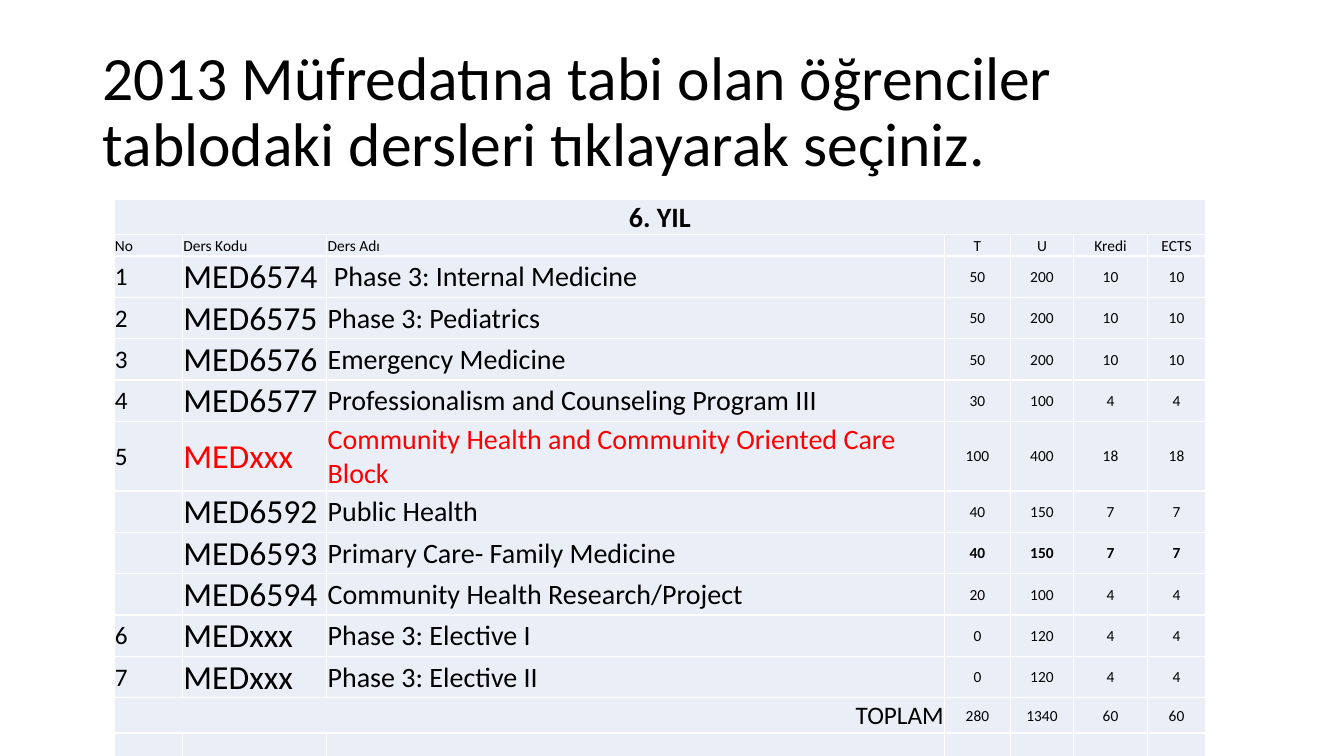
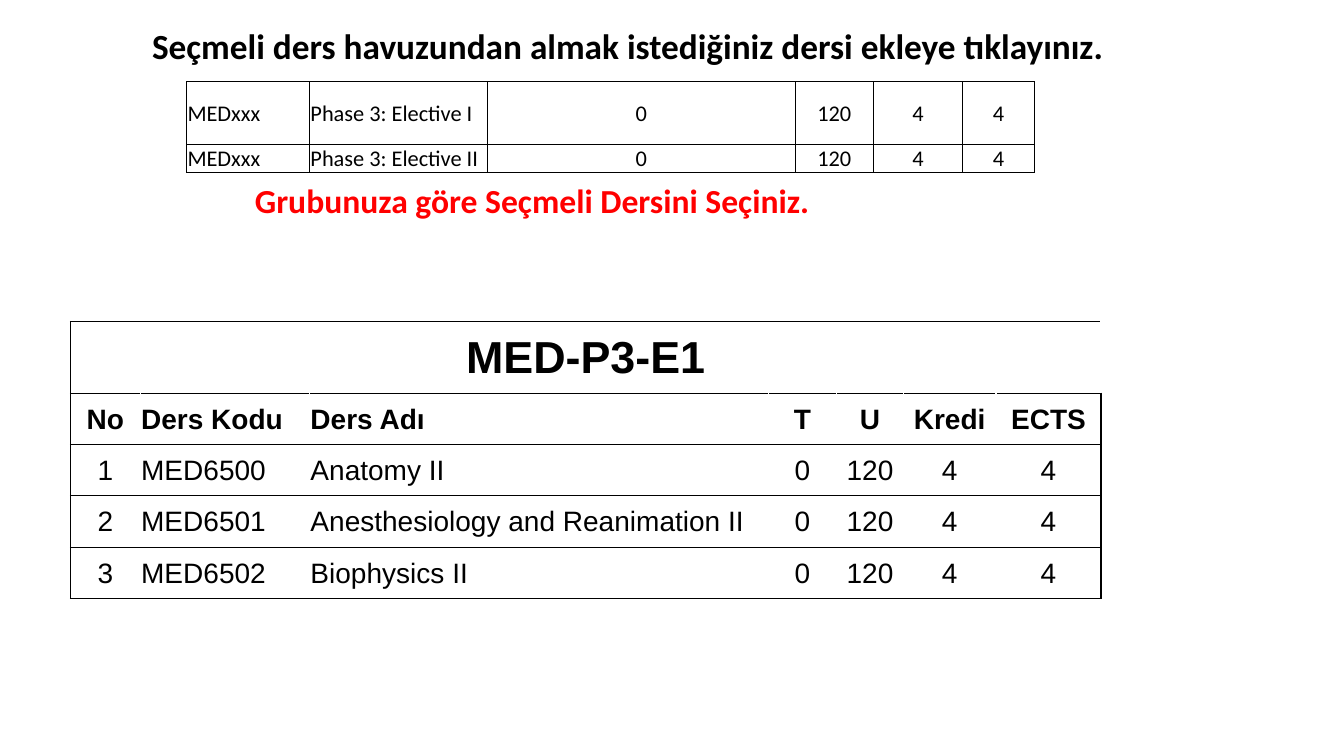
"""Build two slides of medical course tables for sixth-year students."""
from lxml import etree
from pptx import Presentation
from pptx.dml.color import RGBColor
from pptx.enum.text import MSO_ANCHOR, PP_ALIGN
from pptx.oxml.ns import qn
from pptx.util import Inches, Pt

BLACK = RGBColor(0, 0, 0)
WHITE = RGBColor(255, 255, 255)
RED = RGBColor(255, 0, 0)
PALE = RGBColor(0xEA, 0xEF, 0xF7)
ALIGN = {"l": PP_ALIGN.LEFT, "c": PP_ALIGN.CENTER, "r": PP_ALIGN.RIGHT}

HEAD = ("No", "Ders Kodu", "Ders Adı", "T", "U", "Kredi", "ECTS")
YEAR = [
    ("6. YIL",),
    HEAD,
    ("1", "MED6574", " Phase 3: Internal Medicine", "50", "200", "10", "10"),
    ("2", "MED6575", "Phase 3: Pediatrics", "50", "200", "10", "10"),
    ("3", "MED6576", "Emergency Medicine", "50", "200", "10", "10"),
    ("4", "MED6577", "Professionalism and Counseling Program III", "30", "100", "4", "4"),
    ("5", "MEDxxx", "Community Health and Community Oriented Care Block",
     "100", "400", "18", "18"),
    ("", "MED6592", "Public Health", "40", "150", "7", "7"),
    ("", "MED6593", "Primary Care- Family Medicine", "40", "150", "7", "7"),
    ("", "MED6594", "Community Health Research/Project", "20", "100", "4", "4"),
    ("6", "MEDxxx", "Phase 3: Elective I", "0", "120", "4", "4"),
    ("7", "MEDxxx", "Phase 3: Elective II", "0", "120", "4", "4"),
    ("TOPLAM", "", "", "280", "1340", "60", "60"),
    (),
]
SLOTS = [
    ("MEDxxx", "Phase 3: Elective I", "0", "120", "4", "4"),
    ("MEDxxx", "Phase 3: Elective II", "0", "120", "4", "4"),
]
POOL = [
    ("MED-P3-E1",),
    HEAD,
    ("1", "MED6500", "Anatomy II", "0", "120", "4", "4"),
    ("2", "MED6501", "Anesthesiology and Reanimation II", "0", "120", "4", "4"),
    ("3", "MED6502", "Biophysics II", "0", "120", "4", "4"),
]


def ink(para, size, font="Calibri", color=BLACK, bold=False, align="l"):
    para.alignment = ALIGN[align]
    for run in para.runs:
        face = run.font
        face.name, face.size, face.bold = font, Pt(size), bold
        face.color.rgb = color


def label(slide, words, box, size, **look):
    frame = slide.shapes.add_textbox(*map(Inches, box)).text_frame
    frame.word_wrap = True
    frame.vertical_anchor = MSO_ANCHOR.MIDDLE
    para = frame.paragraphs[0]
    para.text = words
    para.line_spacing = 0.9
    ink(para, size, **look)


def edge(cell, sides, color, width):
    props = cell._tc.get_or_add_tcPr()
    for side in sides:
        line = etree.SubElement(props, qn("a:ln" + side), w=str(Pt(width)))
        fill = etree.SubElement(line, qn("a:solidFill"))
        etree.SubElement(fill, qn("a:srgbClr"), val=str(color))


def grid(slide, spot, cols, highs, rows, sizes, aligns, line, width,
         fill=None, font="Calibri", inner=True):
    box = (*spot, sum(cols), sum(highs))
    table = slide.shapes.add_table(len(rows), len(cols), *map(Inches, box)).table
    table.first_row = table.horz_banding = False
    for col, wide in zip(table.columns, cols):
        col.width = Inches(wide)
    for row, high, words in zip(table.rows, highs, rows):
        row.height = Inches(high)
        for c, cell in enumerate(row.cells):
            left = "L" if inner or c == 0 else ""
            right = "R" if inner or c == len(cols) - 1 else ""
            edge(cell, left + right + "TB", line, width)
            if fill is None:
                cell.fill.background()
            else:
                cell.fill.solid()
                cell.fill.fore_color.rgb = fill
            cell.margin_left = cell.margin_right = cell.margin_top = Inches(0.01)
            cell.margin_bottom = 0
            cell.vertical_anchor = MSO_ANCHOR.MIDDLE
            if c < len(words) and words[c]:
                para = cell.text_frame.paragraphs[0]
                para.text = words[c]
                ink(para, sizes[c], font, align=aligns[c])
    return table


def restyle(table, row, cols, size, **look):
    for c in cols:
        ink(table.cell(row, c).text_frame.paragraphs[0], size, **look)


def span(table, row, last, size, **look):
    table.cell(row, 0).merge(table.cell(row, last))
    restyle(table, row, [0], size, **look)


def year(slide):
    label(slide, "2013 Müfredatına tabi olan öğrenciler tablodaki dersleri "
          "tıklayarak seçiniz.", (0.92, 0.4, 11.5, 1.45), 44)
    highs = [0.35, 0.21] + [0.41] * 4 + [0.69] + [0.41] * 5 + [0.35] * 2
    table = grid(slide, (1.13, 1.98), (0.68, 1.43, 6.13, 0.65, 0.63, 0.73, 0.58),
                 highs, YEAR, (18, 24, 20, 11, 11, 11, 11), "lllcccc",
                 WHITE, 1, PALE)
    span(table, 0, 6, 20, bold=True, align="c")
    restyle(table, 1, range(3), 11)
    restyle(table, 6, [1], 24, color=RED)
    restyle(table, 6, [2], 20, color=RED)
    restyle(table, 8, range(3, 7), 11, bold=True, align="c")
    span(table, 12, 2, 18, align="r")


def pool(slide):
    label(slide, "Seçmeli ders havuzundan almak istediğiniz dersi ekleye tıklayınız.",
          (1.41, 0.24, 11, 0.47), 25.2, bold=True)
    label(slide, "Grubunuza göre Seçmeli Dersini Seçiniz.",
          (2.43, 1.76, 10.2, 0.5), 24, color=RED, bold=True)
    grid(slide, (1.85, 0.81), (1.22, 1.76, 3.06, 0.77, 0.89, 0.71), (0.62, 0.28),
         SLOTS, [16] * 6, "llcccc", BLACK, 0.5)
    aligns = "cllcccc"
    table = grid(slide, (0.7, 3.19), (0.69, 1.68, 4.55, 0.68, 0.66, 0.92, 1.04),
                 [0.71] + [0.51] * 4, POOL, [20] * 7, aligns,
                 BLACK, 1, WHITE, "Arial", inner=False)
    span(table, 0, 6, 32, font="Arial", bold=True, align="c")
    for c, align in enumerate(aligns):
        restyle(table, 1, [c], 20, font="Arial", bold=True, align=align)


def main():
    deck = Presentation()
    deck.slide_width, deck.slide_height = Inches(13.33), Inches(7.5)
    for draw in (year, pool):
        draw(deck.slides.add_slide(deck.slide_layouts[6]))
    deck.save("out.pptx")


if __name__ == "__main__":
    main()
